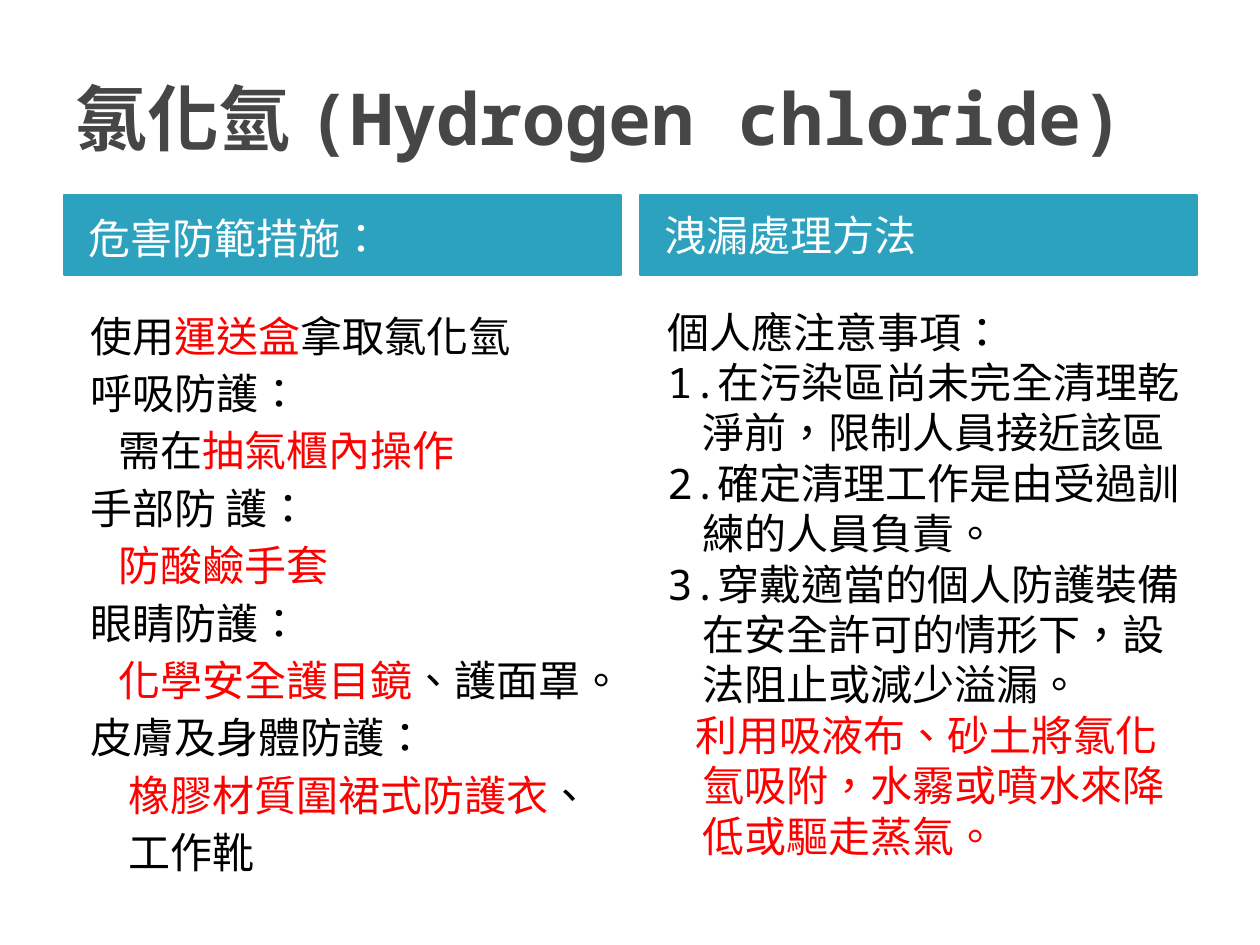
"""Build a slide on hydrogen chloride protection and spill handling."""
from pptx import Presentation
from pptx.dml.color import RGBColor
from pptx.enum.lang import MSO_LANGUAGE_ID
from pptx.enum.shapes import MSO_SHAPE
from pptx.enum.text import MSO_ANCHOR, PP_ALIGN
from pptx.util import Pt

PX = 914400 / 126
FONT = "Noto Sans Mono"
LANG = MSO_LANGUAGE_ID.TRADITIONAL_CHINESE
RECT = MSO_SHAPE.RECTANGLE
MIDDLE, TOP = MSO_ANCHOR.MIDDLE, MSO_ANCHOR.TOP
LEFT = PP_ALIGN.LEFT
COLORS = {"title": "464646", "header": "2DA2BF", "white": "FFFFFF",
          "black": "000000", "red": "FF0000"}


def px(n):
    return round(n * PX)


def write(sp, paragraphs, size, anchor=TOP, bold=False, gap=0):
    tf = sp.text_frame
    tf.word_wrap = True
    tf.vertical_anchor = anchor
    for i, (margin, indent, runs) in enumerate(paragraphs):
        p = tf.paragraphs[0] if i == 0 else tf.add_paragraph()
        p.alignment = LEFT
        p.space_before = Pt(gap if i else 0)
        pPr = p._p.get_or_add_pPr()
        pPr.set("marL", str(px(margin)))
        pPr.set("indent", str(px(indent)))
        p.font.name = FONT
        p.font.size = Pt(size)
        p.font.bold = bold
        for text, color in runs:
            r = p.add_run()
            r.text = text
            r.font.language_id = LANG
            r.font.color.rgb = RGBColor.from_string(COLORS[color])


prs = Presentation()
prs.slide_width, prs.slide_height = px(1260), px(945)
s = prs.slides.add_slide(prs.slide_layouts[6])

title = s.shapes.add_textbox(px(63), px(38), px(1134), px(157))
write(title, [(0, 0, [("氯化氫 (Hydrogen chloride)", "title")])], 41, MIDDLE, bold=True)

headers = [(64, 12, "危害防範措施："), (640, 6, "洩漏處理方法")]
for x, inset, text in headers:
    sp = s.shapes.add_shape(RECT, px(x), px(195), px(557), px(80))
    sp.shadow.inherit = False
    sp.fill.solid()
    sp.fill.fore_color.rgb = RGBColor.from_string(COLORS["header"])
    sp.line.color.rgb = RGBColor.from_string(COLORS["header"])
    sp.line.width = Pt(0.75)
    tf = sp.text_frame
    tf.margin_left, tf.margin_right = px(25), px(13)
    tf.margin_top, tf.margin_bottom = px(inset), px(6)
    write(sp, [(0, 0, [(text, "white")])], 24, MIDDLE)

protection = [
    (15, 0, [("使用", "black"), ("運送盒", "red"), ("拿取氯化氫", "black")]),
    (15, 0, [("呼吸防護：", "black")]),
    (43, 0, [("需在", "black"), ("抽氣櫃內操作", "red")]),
    (15, 0, [("手部防 護：", "black")]),
    (43, 0, [("防酸鹼手套", "red")]),
    (15, 0, [("眼睛防護：", "black")]),
    (43, 0, [("化學安全護目鏡", "red"), ("、護面罩。", "black")]),
    (15, 0, [("皮膚及身體防護：", "black")]),
    (53, 0, [("橡膠材質圍裙式防護衣", "red"), ("、", "black")]),
    (53, 0, [("工作靴", "black")]),
]
spill = [
    (50, -35, [("個人應注意事項：", "black")]),
    (50, -35, [("1.在污染區尚未完全清理乾淨前，限制人員接近該區", "black")]),
    (50, -35, [("2.確定清理工作是由受過訓練的人員負責。", "black")]),
    (50, -35, [("3.穿戴適當的個人防護裝備在安全許可的情形下，設法阻止或減少溢漏。", "black")]),
    (50, -7, [("利用吸液布、砂土將氯化氫吸附，水霧或噴水來降低或驅走蒸氣。", "red")]),
]
left = s.shapes.add_textbox(px(63), px(304), px(557), px(556))
write(left, protection, 24, gap=4)
right = s.shapes.add_textbox(px(640), px(300), px(566), px(544))
write(right, spill, 24)

prs.save("out.pptx")
